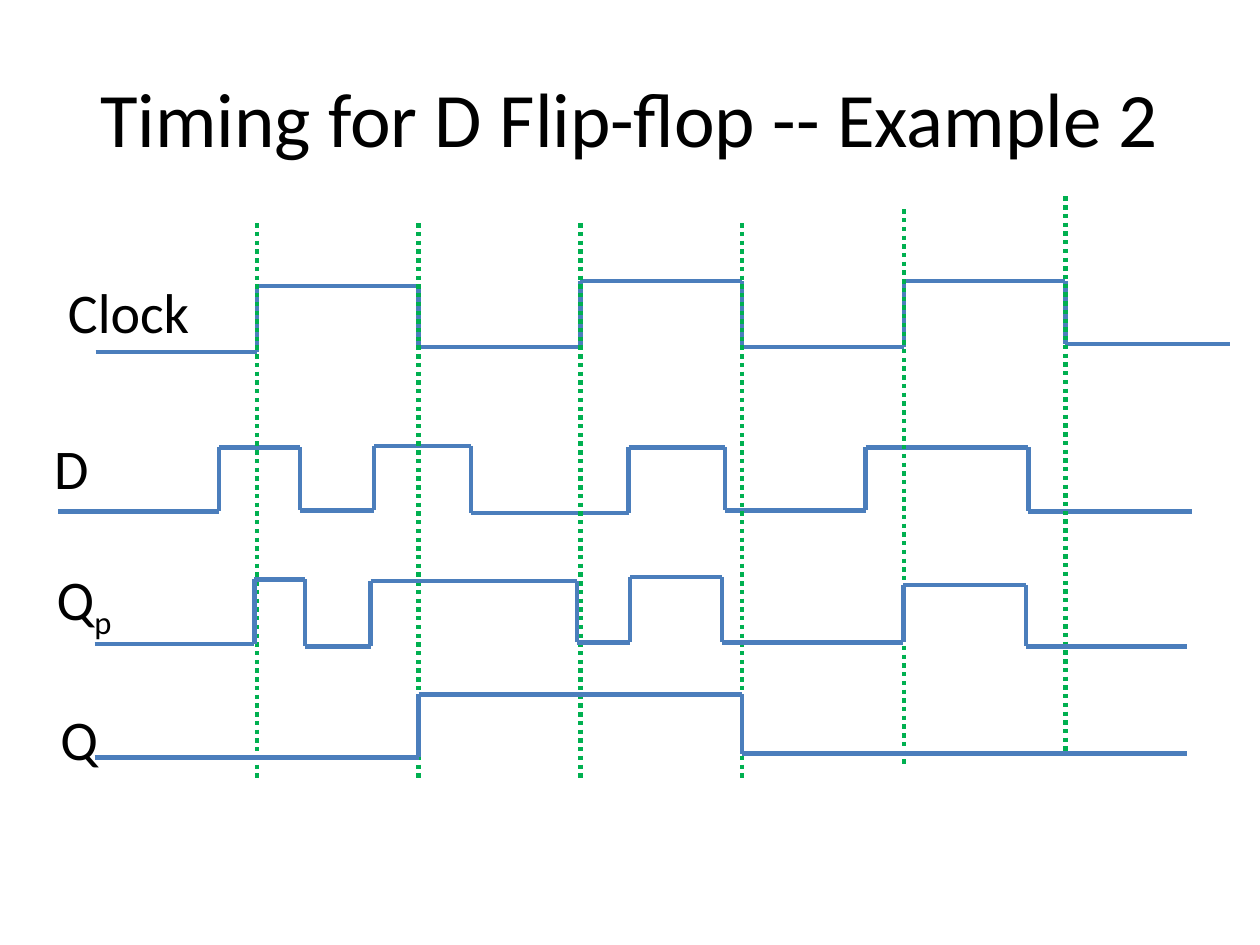
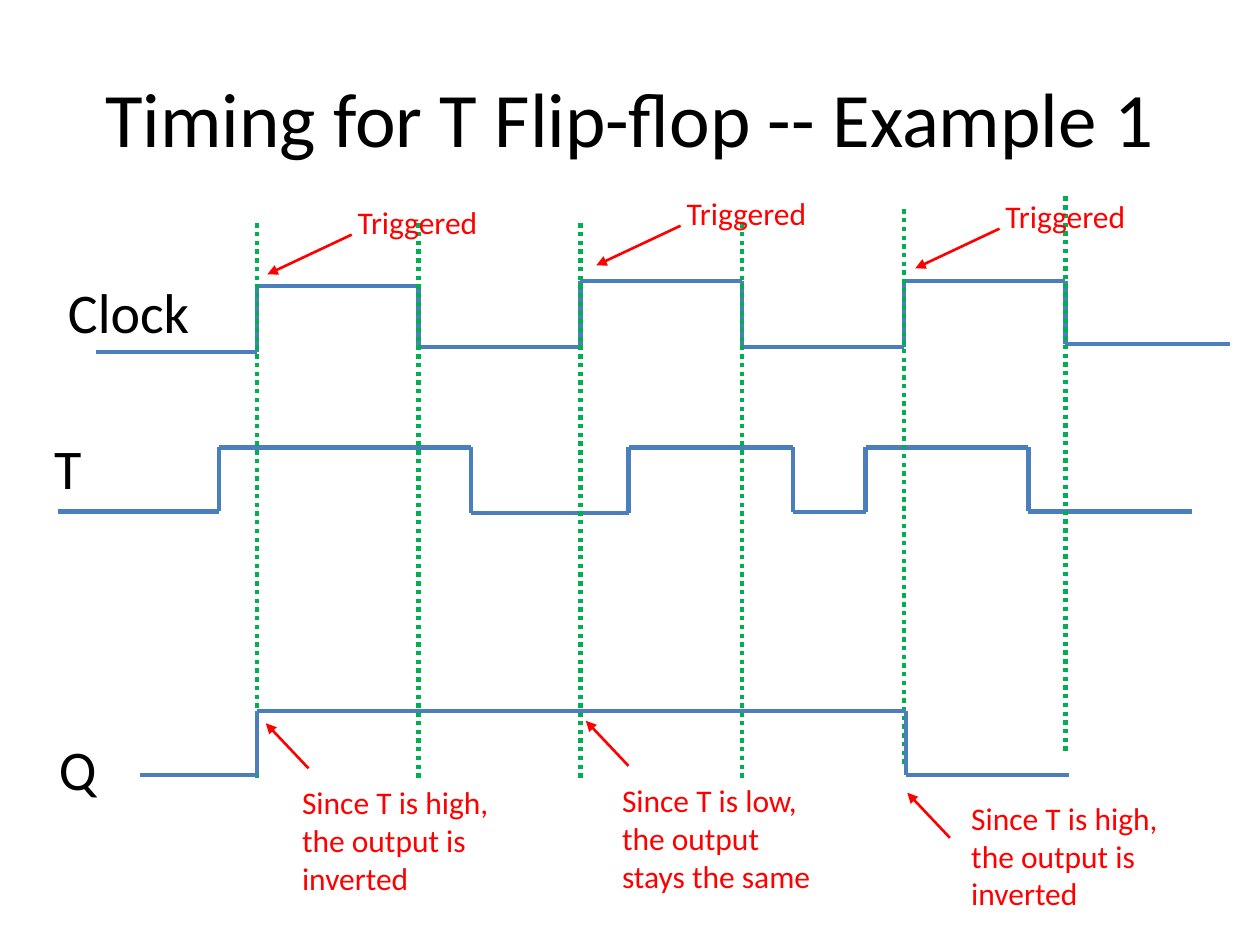
from pptx import Presentation
from pptx.dml.color import RGBColor
from pptx.enum.dml import MSO_LINE
from pptx.enum.shapes import MSO_CONNECTOR
from pptx.enum.text import MSO_ANCHOR, PP_ALIGN
from pptx.oxml.ns import qn
from pptx.util import Cm, Pt
from lxml import etree

STRAIGHT = MSO_CONNECTOR.STRAIGHT
DOTTED = MSO_LINE.ROUND_DOT
CENTER = PP_ALIGN.CENTER
MIDDLE = MSO_ANCHOR.MIDDLE

BLACK = RGBColor(0x00, 0x00, 0x00)
SIGNAL_BLUE = RGBColor(0x4B, 0x7E, 0xBC)
GUIDE_GREEN = RGBColor(0x00, 0xB0, 0x50)
NOTE_RED = RGBColor(0xFF, 0x00, 0x00)

FONT = "Calibri"
TITLE_ONLY = 5

EDGES = [5.18 + 3.26 * number for number in range(6)]
GUIDE_TOPS = [4.5, 4.5, 4.5, 4.5, 4.22, 3.96]
GUIDE_LENGTH = 11.18

CLOCK_STEPS = list(zip([7.09, 5.77, 6.99, 5.66, 6.99, 5.66, 6.93], EDGES + [24.79]))
D_STEPS = [(10.31, 4.42), (9.02, 6.05), (10.29, 7.54), (8.99, 9.5), (10.34, 12.67),
           (9.02, 14.61), (10.29, 17.45), (9.02, 20.73), (10.31, 24.03)]
QP_STEPS = [(12.98, 5.13), (11.68, 6.15), (13.03, 7.47), (11.71, 11.63), (12.95, 12.7),
            (11.63, 14.55), (12.95, 18.21), (11.79, 20.68), (13.03, 23.93)]
D_OUTPUT_STEPS = [(15.27, EDGES[1]), (14, EDGES[3]), (15.19, 23.93)]
T_STEPS = [(10.31, 4.42), (9.02, 9.5), (10.34, 12.67), (9.02, 15.98), (10.32, 17.45),
           (9.02, 20.73), (10.31, 24.03)]
T_OUTPUT_STEPS = [(15.62, EDGES[0]), (14.33, 18.26), (15.62, 21.54)]

TRIGGERS = [(6.96, 3.96), (13.59, 3.78), (20.02, 3.84)]
REASONS = [
    ("Since T is high, the output is inverted", 5.84, 15.67, 0.38, -0.18),
    ("Since T is low, the output stays the same", 12.29, 15.62, 0.38, -0.18),
    ("Since T is high, the output is inverted", 19.33, 15.98, -0.18, 0.91),
]


def add_span(para, text, size, color):
    span = para.add_run()
    span.text = text
    span.font.name = FONT
    span.font.size = Pt(size)
    span.font.color.rgb = color
    return span


def add_text(page, text, left, top, width, height, size=32, color=BLACK):
    box = page.shapes.add_textbox(Cm(left), Cm(top), Cm(width), Cm(height))
    box.text_frame.word_wrap = True
    para = box.text_frame.paragraphs[0]
    add_span(para, text, size, color)
    return para


def add_label(page, text, left, top, width=1.27):
    return add_text(page, text, left, top, width, 1.63)


def add_line(page, start, end, color, weight=2.5):
    line = page.shapes.add_connector(
        STRAIGHT, Cm(start[0]), Cm(start[1]), Cm(end[0]), Cm(end[1]))
    line.line.color.rgb = color
    line.line.width = Pt(weight)
    etree.SubElement(line._element.spPr, qn("a:effectLst"))
    return line


def add_arrow(page, start, end):
    arrow = add_line(page, start, end, NOTE_RED, 1.5)
    outline = arrow._element.spPr.find(qn("a:ln"))
    etree.SubElement(outline, qn("a:tailEnd"), type="triangle")


def add_wave(page, start, steps):
    left, previous = start, None
    for level, right in steps:
        if previous is not None:
            add_line(page, (left, previous), (left, level), SIGNAL_BLUE)
        add_line(page, (left, level), (right, level), SIGNAL_BLUE)
        left, previous = right, level


def add_guides(page):
    for edge, top in zip(EDGES, GUIDE_TOPS):
        guide = add_line(page, (edge, top), (edge, top + GUIDE_LENGTH), GUIDE_GREEN)
        guide.line.dash_style = DOTTED


def add_trigger(page, left, top):
    add_text(page, "Triggered", left, top, 3.15, 1.02, 18, NOTE_RED)
    add_arrow(page, (left + 0.13, top + 0.77), (left - 1.57, top + 1.57))


def add_reason(page, text, left, top, shift_x, shift_y):
    add_text(page, text, left, top, 4.42, 2.57, 18, NOTE_RED)
    x, y = left + shift_x, top + shift_y
    add_arrow(page, (x, y), (x - 0.86, y - 0.91))


def add_timing_page(deck, title, input_name, input_steps):
    page = deck.slides.add_slide(deck.slide_layouts[TITLE_ONLY])
    box = page.shapes.title
    box.left, box.top, box.width, box.height = Cm(1.27), Cm(0.76), Cm(22.86), Cm(3.18)
    box.text_frame.vertical_anchor = MIDDLE
    para = box.text_frame.paragraphs[0]
    para.alignment = CENTER
    add_span(para, title, 44, BLACK)
    add_label(page, input_name, 0.84, 8.61)
    add_label(page, "Clock", 1.12, 5.46, 3.02)
    add_wave(page, 1.93, CLOCK_STEPS)
    add_wave(page, 1.17, input_steps)
    add_guides(page)
    return page


def add_d_page(deck):
    page = add_timing_page(deck, "Timing for D Flip-flop -- Example 2", "D", D_STEPS)
    add_wave(page, 1.91, QP_STEPS)
    para = add_label(page, "Q", 0.89, 11.25, 2.24)
    subscript = add_span(para, "p", 32, BLACK)
    subscript._r.get_or_add_rPr().set("baseline", "-25000")
    add_label(page, "Q", 0.97, 14.07)
    add_wave(page, 1.91, D_OUTPUT_STEPS)


def add_t_page(deck):
    page = add_timing_page(deck, "Timing for T Flip-flop -- Example 1", "T", T_STEPS)
    add_label(page, "Q", 0.94, 14.68)
    add_wave(page, 2.82, T_OUTPUT_STEPS)
    for trigger in TRIGGERS:
        add_trigger(page, *trigger)
    for reason in REASONS:
        add_reason(page, *reason)


def main():
    deck = Presentation()
    deck.slide_width, deck.slide_height = Cm(25.4), Cm(19.05)
    add_d_page(deck)
    add_t_page(deck)
    deck.save("out.pptx")


if __name__ == "__main__":
    main()
